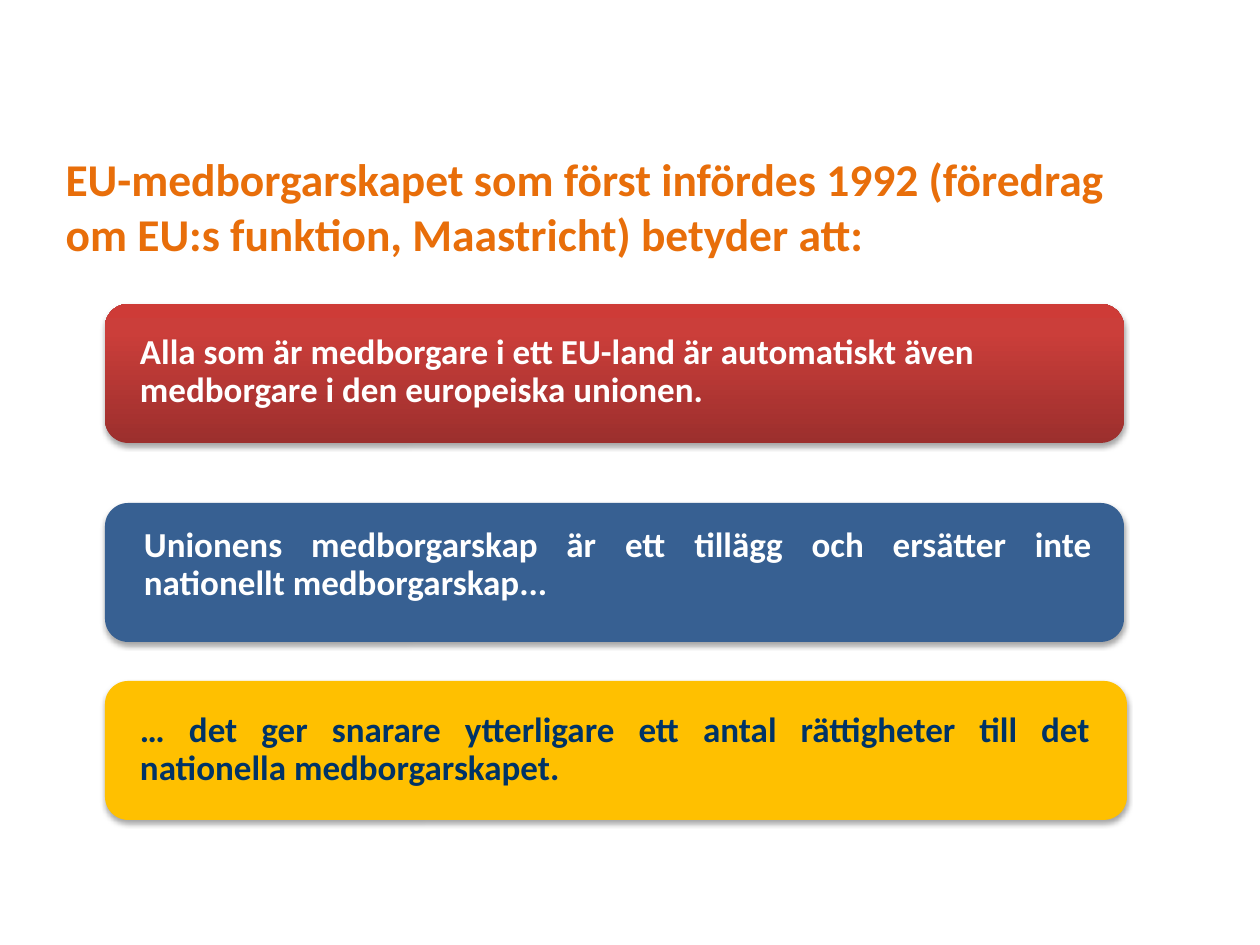
"""Build a slide on what EU citizenship means, with three coloured statement cards."""
from copy import deepcopy

from lxml import etree
from pptx import Presentation
from pptx.dml.color import RGBColor
from pptx.enum.shapes import MSO_SHAPE
from pptx.enum.text import MSO_ANCHOR, MSO_AUTO_SIZE, PP_ALIGN
from pptx.oxml.ns import qn
from pptx.util import Emu, Pt

ROUNDED = MSO_SHAPE.ROUNDED_RECTANGLE
TOP, MIDDLE = MSO_ANCHOR.TOP, MSO_ANCHOR.MIDDLE
LEFT, JUSTIFY = PP_ALIGN.LEFT, PP_ALIGN.JUSTIFY
NO_AUTOSIZE = MSO_AUTO_SIZE.NONE
EMU_PER_PX = 914400 / 126
TITLE_ONLY = 5
COLOURS = {
    "orange": "E86E0A",
    "white": "FFFFFF",
    "navy": "003366",
    "blue": "376092",
    "yellow": "FFC000",
    "red_dark": "9C2F2D",
    "red": "CB3E3A",
    "red_light": "CE3B37",
    "black": "000000",
}
RED_GRADIENT = [(0, "red_dark"), (0.8, "red"), (1, "red_light")]


def px(length):
    return Emu(round(length * EMU_PER_PX))


def colour(name):
    return RGBColor.from_string(COLOURS[name])


def write_text(frame, text, *, size, color, align=LEFT, anchor=TOP, spacing=1.0):
    frame.word_wrap = True
    frame.auto_size = NO_AUTOSIZE
    frame.vertical_anchor = anchor
    paragraph = frame.paragraphs[0]
    paragraph.alignment = align
    paragraph.line_spacing = spacing
    run = paragraph.add_run()
    run.text = text
    run.font.name = "Calibri"
    run.font.size = Pt(size)
    run.font.bold = True
    run.font.color.rgb = colour(color)


class CitizenshipSlide:
    def __init__(self, presentation):
        self.slide = presentation.slides.add_slide(presentation.slide_layouts[TITLE_ONLY])
        self.card_left = 105
        self.card_height = 139
        self.text_height = 125
        self.text_inset = 29

    def title(self, text, left, top, width, height):
        title = self.slide.shapes.title
        title.left, title.top = px(left), px(top)
        title.width, title.height = px(width), px(height)
        write_text(title.text_frame, text, size=26, color="orange")

    def gradient(self, shape, stops):
        shape.fill.gradient()
        shape.fill.gradient_angle = 90
        stop_list = shape._element.spPr.find(qn("a:gradFill")).find(qn("a:gsLst"))
        stop_list.append(deepcopy(stop_list[-1]))
        for stop, (position, name) in zip(shape.fill.gradient_stops, stops):
            stop.position = position
            stop.color.rgb = colour(name)

    def shadow(self, shape):
        shape.shadow.inherit = False
        effects = shape._element.spPr.find(qn("a:effectLst"))
        outer = etree.SubElement(
            effects, qn("a:outerShdw"), blurRad=str(Pt(3.1)), dist=str(Pt(1.8)),
            dir="5400000", rotWithShape="0",
        )
        black = etree.SubElement(outer, qn("a:srgbClr"), val=COLOURS["black"])
        etree.SubElement(black, qn("a:alpha"), val="35000")

    def card(self, text, top, width, fill, text_box, color="white", align=JUSTIFY):
        group = self.slide.shapes.add_group_shape()
        shape = group.shapes.add_shape(
            ROUNDED, px(self.card_left), px(top), px(width), px(self.card_height)
        )
        if isinstance(fill, list):
            self.gradient(shape, fill)
        else:
            shape.fill.solid()
            shape.fill.fore_color.rgb = colour(fill)
        shape.line.fill.background()
        self.shadow(shape)
        left, text_top, text_width = text_box
        box = group.shapes.add_textbox(
            px(left), px(text_top), px(text_width), px(self.text_height)
        )
        frame = box.text_frame
        frame.margin_left = frame.margin_right = px(self.text_inset)
        frame.margin_top = frame.margin_bottom = 0
        write_text(frame, text, size=20, color=color, align=align, anchor=MIDDLE, spacing=0.9)


def main():
    presentation = Presentation()
    presentation.slide_width, presentation.slide_height = px(1260), px(945)
    page = CitizenshipSlide(presentation)
    page.title(
        "EU-medborgarskapet som först infördes 1992 (föredrag om EU:s funktion, "
        "Maastricht) betyder att:",
        53, 145, 1091, 123,
    )
    page.card(
        "Alla som är medborgare i ett EU-land är automatiskt även medborgare i den "
        "europeiska unionen.",
        304, 1019, RED_GRADIENT, (111, 310, 1007), align=LEFT,
    )
    page.card(
        "Unionens medborgarskap är ett tillägg och ersätter inte nationellt "
        "medborgarskap...",
        503, 1019, "blue", (115, 503, 1006),
    )
    page.card(
        "… det ger snarare ytterligare ett antal rättigheter till det nationella "
        "medborgarskapet.",
        681, 1022, "yellow", (111, 688, 1008), color="navy",
    )
    presentation.save("out.pptx")


if __name__ == "__main__":
    main()
